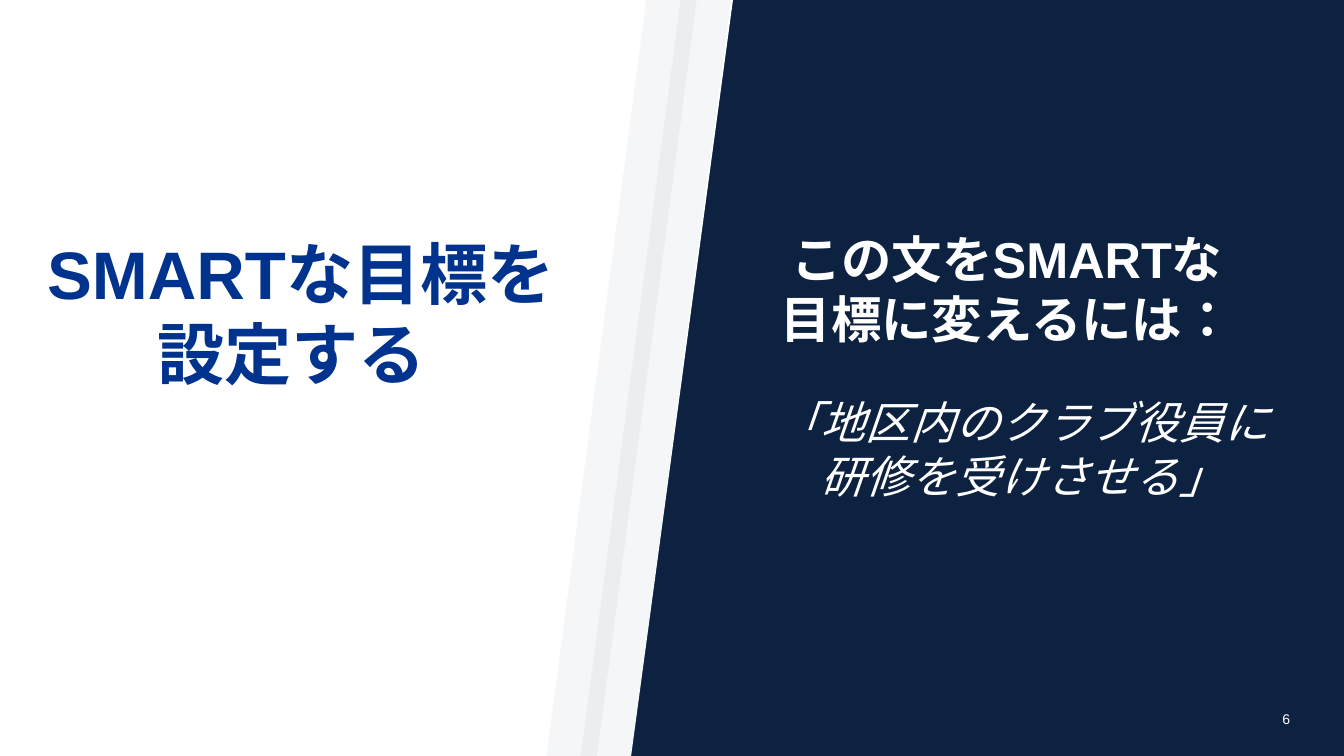
from lxml import etree
from pptx import Presentation
from pptx.dml.color import RGBColor
from pptx.enum.lang import MSO_LANGUAGE_ID
from pptx.enum.shapes import MSO_SHAPE
from pptx.enum.text import MSO_ANCHOR, PP_ALIGN
from pptx.oxml.ns import qn
from pptx.util import Inches, Pt

RECT = MSO_SHAPE.RECTANGLE
TOP, BOTTOM = MSO_ANCHOR.TOP, MSO_ANCHOR.BOTTOM
LEFT, CENTER = PP_ALIGN.LEFT, PP_ALIGN.CENTER
JAPANESE = MSO_LANGUAGE_ID.JAPANESE

W, H = 13.33, 7.5
NAVY, BLUE, WHITE = "0D2240", "00338D", "FFFFFF"
FONT = "Arial"


def rgb(color):
    return RGBColor.from_string(color)


def paint(sp, color, alpha=None):
    """Give a flat fill without line or shadow; alpha is opacity in percent."""
    sp.shadow.inherit = False
    sp.line.fill.background()
    sp.fill.solid()
    sp.fill.fore_color.rgb = rgb(color)
    if alpha is not None:
        clr = sp.fill._xPr.find(qn("a:solidFill"))[0]
        etree.SubElement(clr, qn("a:alpha"), val=str(alpha * 1000))


def add_polygon(s, points, color, alpha=None):
    pts = [(Inches(x), Inches(y)) for x, y in points]
    fb = s.shapes.build_freeform(*pts[0], scale=1.0)
    fb.add_line_segments(pts[1:], close=True)
    paint(fb.convert_to_shape(), color, alpha)


def add_stripe(s, top_left, width=0.5, slant=0.99):
    """Add a pale slanted stripe over the full slide height."""
    right = top_left + width
    add_polygon(s, [(top_left, 0), (right, 0), (right - slant, H),
                    (top_left - slant, H)], NAVY, alpha=4)


def add_text(s, text, x, y, w, h, size, color=WHITE, bold=False, italic=False,
             align=CENTER, anchor=TOP):
    tf = s.shapes.add_textbox(Inches(x), Inches(y), Inches(w), Inches(h)).text_frame
    tf.word_wrap = True
    tf.vertical_anchor = anchor
    p = tf.paragraphs[0]
    p.text = text
    p.alignment = align
    for r in p.runs:
        f = r.font
        f.name, f.size, f.bold, f.italic = FONT, Pt(size), bold, italic
        f.color.rgb = rgb(color)
        f.language_id = JAPANESE
        r._r.rPr.find(qn("a:latin")).addnext(
            etree.Element(qn("a:ea"), typeface=FONT))


def main():
    prs = Presentation()
    prs.slide_width, prs.slide_height = Inches(W), Inches(H)
    s = prs.slides.add_slide(prs.slide_layouts[6])

    paint(s.shapes.add_shape(RECT, 0, 0, Inches(W), Inches(H)), NAVY)
    add_polygon(s, [(0, 0), (7.27, 0), (6.26, H), (0, H)], WHITE)
    for top_left in (6.41, 6.75):
        add_stripe(s, top_left)

    add_text(s, "SMARTな目標を設定する ", 0.2, 2.2, 5.57, 1.75, 48,
             color=BLUE, bold=True, anchor=BOTTOM)
    add_text(s, "6", 12.62, 7, 0.72, 0.5, 10, align=LEFT)
    add_text(s, "この文をSMARTな\v目標に変えるには：", 6.98, 2.21, 6.01, 0.79, 36,
             bold=True)
    add_text(s, "「地区内のクラブ役員に\v研修を受けさせる」", 7.57, 3.87, 5.15, 1.18, 32,
             italic=True)

    prs.save("out.pptx")


if __name__ == "__main__":
    main()
